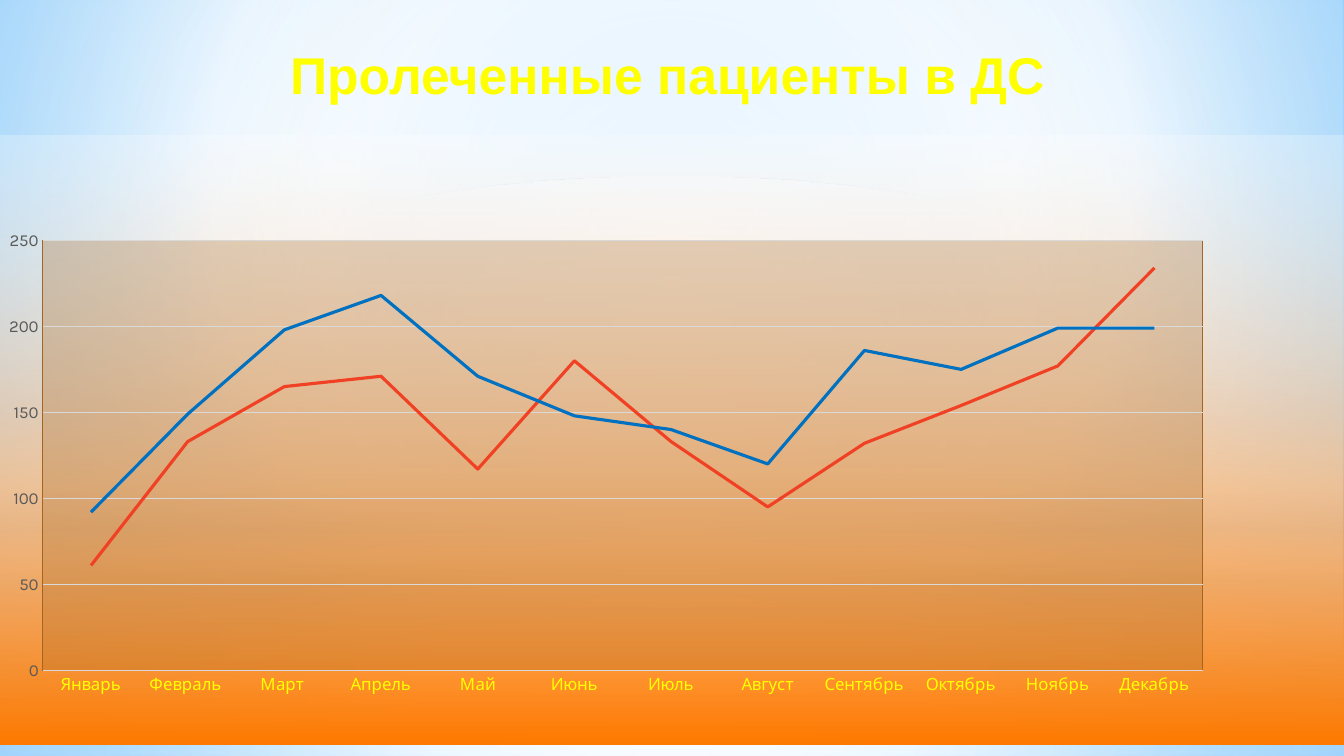
"""Builds a slide with a line chart of day-hospital patients by month."""
from lxml import etree
from pptx import Presentation
from pptx import util as u
from pptx.chart.data import CategoryChartData
from pptx.dml.color import RGBColor
from pptx.enum import chart as charts, shapes, text
from pptx.oxml import parse_xml
from pptx.oxml.ns import nsdecls, qn

YELLOW = RGBColor(0xFF, 0xFF, 0x00)
WHITE = RGBColor(0xFF, 0xFF, 0xFF)
SKY = RGBColor(0x9E, 0xD5, 0xFF)
AZURE = RGBColor(0x5B, 0xB9, 0xFF)
PALE_BLUE = RGBColor(0xB4, 0xDC, 0xFA)
ORANGE = RGBColor(0xFF, 0x7A, 0x00)
SCARLET = RGBColor(0xFF, 0x03, 0x00)
MAROON = RGBColor(0x4D, 0x08, 0x08)
BROWN = RGBColor(0xA4, 0x65, 0x20)
BLACK = RGBColor(0, 0, 0)
GREY = RGBColor(0x59, 0x59, 0x59)
LIGHT_GREY = RGBColor(0xD9, 0xD9, 0xD9)
RED = RGBColor(0xF1, 0x41, 0x24)
BLUE = RGBColor(0x00, 0x70, 0xC0)

WIDTH, HEIGHT = 960, 540
CENTRE = (50, 50, 50, 50)
MONTHS = ["Январь", "Февраль ", "Март ", "Апрель", "Май", "Июнь", "Июль",
          "Август", "Сентябрь", "Октябрь", "Ноябрь", "Декабрь"]
SERIES = [
    ("Series 1", RED, [61, 133, 165, 171, 117, 180, 133, 95, 132, 154, 177, 234]),
    ("Series 2", BLUE, [92, 149, 198, 218, 171, 148, 140, 120, 186, 175, 199, 199]),
]


def colour_xml(colour, opacity=100):
    return f'<a:srgbClr val="{colour}"><a:alpha val="{opacity * 1000}"/></a:srgbClr>'


def gradient_xml(stops, angle=None, focus=CENTRE):
    """Return a linear gradient if an angle is given, else a circular one."""
    stop_list = "".join(f'<a:gs pos="{position * 1000}">{colour_xml(colour, opacity)}</a:gs>'
                        for position, colour, opacity in stops)
    if angle is None:
        sides = " ".join(f'{side}="{share * 1000}"' for side, share in zip("ltrb", focus))
        direction = f'<a:path path="circle"><a:fillToRect {sides}/></a:path>'
    else:
        direction = f'<a:lin ang="{angle * 60000}" scaled="0"/>'
    return (f'<a:gradFill {nsdecls("a")} rotWithShape="1">'
            f'<a:gsLst>{stop_list}</a:gsLst>{direction}</a:gradFill>')


def replace_solid_fill(properties, fill_xml):
    properties.replace(properties.find(qn("a:solidFill")), parse_xml(fill_xml))


def chart_properties(fill_xml, line_xml="<a:ln><a:noFill/></a:ln>"):
    return parse_xml(f'<c:spPr {nsdecls("c", "a")}>{fill_xml}{line_xml}</c:spPr>')


def format_font(font, size, colour, name="Karla", bold=False):
    font.size, font.name, font.bold = u.Pt(size), name, bold
    font.color.rgb = colour


def add_text(slide, box, content, *, size, colour, name, bold=False, spacing=1.0):
    """Add a centred one-paragraph text box."""
    frame = slide.shapes.add_textbox(*map(u.Pt, box)).text_frame
    frame.word_wrap = True
    frame.vertical_anchor = text.MSO_ANCHOR.MIDDLE
    paragraph = frame.paragraphs[0]
    paragraph.alignment = text.PP_ALIGN.CENTER
    paragraph.line_spacing = spacing
    run = paragraph.add_run()
    run.text = content
    format_font(run.font, size, colour, name, bold)


def add_glow(slide, kind, box, stops, angle=None):
    """Add a borderless shape with a translucent gradient."""
    shape = slide.shapes.add_shape(kind, *map(u.Pt, box))
    shape.shadow.inherit = False
    shape.line.fill.background()
    shape.fill.solid()
    replace_solid_fill(shape.element.spPr, gradient_xml(stops, angle))


def add_backdrop(slide, box):
    """Paint the background and its layers of light inside the box."""
    left, top, width, height = box
    slide.background.fill.solid()
    properties = slide.element.find(".//" + qn("p:bgPr"))
    replace_solid_fill(properties, gradient_xml(
        [(0, SKY, 100), (60, WHITE, 100), (100, AZURE, 100)], focus=(20, 10, 20, 60)))
    rectangle, oval = shapes.MSO_SHAPE.RECTANGLE, shapes.MSO_SHAPE.OVAL
    horizon = 402
    add_glow(slide, rectangle, (left, top + horizon, width, height - horizon),
             [(0, WHITE, 91), (37, WHITE, 76), (100, PALE_BLUE, 79)])
    add_glow(slide, rectangle, (left, top, width, horizon),
             [(0, WHITE, 89), (48, WHITE, 62), (100, PALE_BLUE, 79)])
    add_glow(slide, rectangle, (left, top + 297, width, 180),
             [(0, WHITE, 0), (29, WHITE, 30), (45, PALE_BLUE, 40),
              (55, WHITE, 26), (65, PALE_BLUE, 60), (100, WHITE, 0)], angle=90)
    add_glow(slide, oval, (left, top + 126, width, horizon),
             [(0, WHITE, 100), (56, WHITE, 0)])


def style_chart_areas(chart):
    """Fill the chart and plot areas and fix the inner plot position."""
    chart_space = chart.element
    background = gradient_xml([(0, WHITE, 27), (100, ORANGE, 100),
                               (100, SCARLET, 100), (100, MAROON, 100)], angle=90)
    chart_space.find(qn("c:chart")).addnext(chart_properties(background))
    plot_area = chart_space.find(".//" + qn("c:plotArea"))
    for old_layout in plot_area.findall(qn("c:layout")):
        plot_area.remove(old_layout)
    layout = parse_xml(f'<c:layout {nsdecls("c")}><c:manualLayout/></c:layout>')
    settings = [("layoutTarget", "inner"), ("xMode", "edge"), ("yMode", "edge"),
                ("x", "0.039"), ("y", "0.173"), ("w", "0.857"), ("h", "0.706")]
    for tag, value in settings:
        etree.SubElement(layout[0], qn("c:" + tag)).set("val", value)
    plot_area.insert(0, layout)
    plot_area.append(chart_properties(
        f"<a:solidFill>{colour_xml(BROWN, 28)}</a:solidFill>",
        f'<a:ln w="9525"><a:solidFill>{colour_xml(BROWN)}</a:solidFill></a:ln>'))


def style_axis(axis, colour):
    axis.major_tick_mark = axis.minor_tick_mark = charts.XL_TICK_MARK.NONE
    format_font(axis.tick_labels.font, 12, colour)


def style_line(line, colour, width):
    line.color.rgb = colour
    line.width = u.Pt(width)


def add_patient_chart(slide, box):
    """Add the monthly line chart in the box."""
    data = CategoryChartData()
    data.categories = MONTHS
    for name, _, values in SERIES:
        data.add_series(name, values)
    chart = slide.shapes.add_chart(charts.XL_CHART_TYPE.LINE, *map(u.Pt, box), data).chart
    chart.has_title = chart.has_legend = False
    format_font(chart.font, 10, BLACK)
    plot = chart.plots[0]
    plot.vary_by_categories = False
    for series, (_, colour, _) in zip(plot.series, SERIES):
        series.smooth = False
        series.marker.style = charts.XL_MARKER_STYLE.NONE
        style_line(series.format.line, colour, 2.25)
    months, patients = chart.category_axis, chart.value_axis
    style_axis(months, YELLOW)
    style_line(months.format.line, LIGHT_GREY, 0.75)
    style_axis(patients, GREY)
    patients.format.line.fill.background()
    patients.minimum_scale, patients.maximum_scale, patients.major_unit = 0, 250, 50
    patients.has_major_gridlines = True
    style_line(patients.major_gridlines.format.line, LIGHT_GREY, 0.75)
    style_chart_areas(chart)


def main():
    presentation = Presentation()
    presentation.slide_width, presentation.slide_height = u.Pt(WIDTH), u.Pt(HEIGHT)
    slide = presentation.slides.add_slide(presentation.slide_layouts[6])
    add_backdrop(slide, (0, 0, WIDTH, HEIGHT))
    add_text(slide, (70, 34.5, 814, 44.5), "Пролеченные пациенты в ДС",
             size=36.9, colour=YELLOW, name="Arial", bold=True, spacing=0.8)
    add_patient_chart(slide, (-7.2, 96.5, 967, 435))
    presentation.save("out.pptx")


if __name__ == "__main__":
    main()
